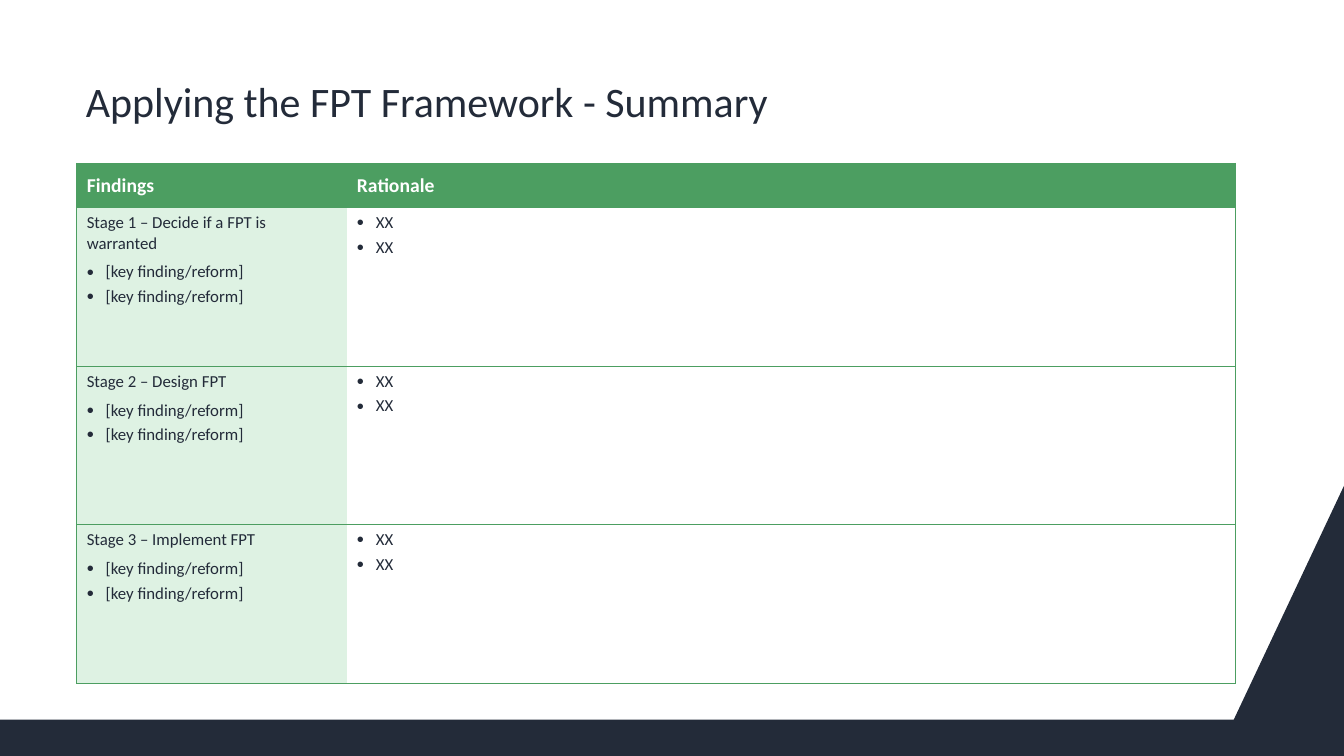
import dataclasses

import lxml.etree
import pptx
import pptx.dml.color
import pptx.enum.text
import pptx.oxml.ns
import pptx.util

Pt = pptx.util.Pt
qn = pptx.oxml.ns.qn
Anchor = pptx.enum.text.MSO_ANCHOR


@dataclasses.dataclass(frozen=True)
class Theme:
    font: str = "Calibri"
    navy: str = "232B39"
    green: str = "4C9E61"
    mint: str = "DEF2E3"
    white: str = "FFFFFF"
    title: int = 30
    head: int = 14
    body: int = 12


THEME = Theme()
BULLET = dict(bullet=True, after=3)
STAGES = (
    "Stage 1 – Decide if a FPT is warranted",
    "Stage 2 – Design FPT",
    "Stage 3 – Implement FPT",
)


def paint(fill, color):
    fill.solid()
    fill.fore_color.rgb = pptx.dml.color.RGBColor.from_string(color)


def write(frame, text, size=THEME.body, color=THEME.navy, bold=False,
          bullet=False, after=0, first=False):
    par = frame.paragraphs[0] if first else frame.add_paragraph()
    par.alignment = pptx.enum.text.PP_ALIGN.LEFT
    par.space_after = Pt(after)
    run = par.add_run()
    run.text = text
    run.font.name = THEME.font
    run.font.size = Pt(size)
    run.font.bold = bold
    paint(run.font.fill, color)
    if bullet:
        props = par._p.get_or_add_pPr()
        props.set("marL", str(Pt(13.5)))
        props.set("indent", str(-Pt(13.5)))
        lxml.etree.SubElement(props, qn("a:buSzPct"), val="120000")
        lxml.etree.SubElement(props, qn("a:buFont"), typeface="Arial")
        lxml.etree.SubElement(props, qn("a:buChar"), char="•")


def border(cell, inner):
    props = cell._tc.get_or_add_tcPr()
    for side in "LRTB":
        line = lxml.etree.SubElement(props, qn("a:ln" + side), w=str(Pt(1)))
        if side == inner:
            lxml.etree.SubElement(line, qn("a:noFill"))
        else:
            fill = lxml.etree.SubElement(line, qn("a:solidFill"))
            lxml.etree.SubElement(fill, qn("a:srgbClr"), val=THEME.green)


def add_base(slide, left, top, width, height):
    right, low = left + width, top + height
    edge = low - 26
    form = slide.shapes.build_freeform(Pt(right - 78.7), Pt(edge))
    corners = ((left, edge), (left, low), (right, low), (right, top))
    form.add_line_segments([(Pt(x), Pt(y)) for x, y in corners])
    base = form.convert_to_shape()
    base.shadow.inherit = False
    paint(base.fill, THEME.navy)
    base.line.fill.background()


def add_title(slide, left, top, width, height):
    title = slide.shapes.title
    title.left, title.top = Pt(left), Pt(top)
    title.width, title.height = Pt(width), Pt(height)
    frame = title.text_frame
    frame.margin_left = frame.margin_right = Pt(6)
    frame.margin_top = frame.margin_bottom = Pt(3.6)
    frame.auto_size = pptx.enum.text.MSO_AUTO_SIZE.NONE
    frame.vertical_anchor = Anchor.MIDDLE
    write(frame, "Applying the FPT Framework - Summary",
          size=THEME.title, first=True)


def add_grid(slide, left, top, width, height):
    rows = len(STAGES) + 1
    table = slide.shapes.add_table(
        rows, 2, Pt(left), Pt(top), Pt(width), Pt(height)).table
    side, head = 193, 31.5
    table.columns[0].width = Pt(side)
    table.columns[1].width = Pt(width - side)
    for index, row in enumerate(table.rows):
        row.height = Pt((height - head) / len(STAGES) if index else head)
        for cell, inner, tint in zip(row.cells, "RL", (THEME.mint, THEME.white)):
            border(cell, inner)
            paint(cell.fill, tint if index else THEME.green)
    for cell, label in zip(table.rows[0].cells, ("Findings", "Rationale")):
        cell.vertical_anchor = Anchor.MIDDLE
        write(cell.text_frame, label, size=THEME.head, color=THEME.white,
              bold=True, first=True)
    for index, stage in enumerate(STAGES, 1):
        finding, reason = (cell.text_frame for cell in table.rows[index].cells)
        write(finding, stage, after=6, first=True)
        for first in (True, False):
            write(finding, "[key finding/reform]", **BULLET)
            write(reason, "XX", first=first, **BULLET)


def main():
    deck = pptx.Presentation()
    deck.slide_width, deck.slide_height = Pt(960), Pt(540)
    slide = deck.slides.add_slide(deck.slide_layouts[5])
    add_base(slide, 0, 347, 960, 193)
    add_grid(slide, 54.8, 116.8, 828, 371.4)
    add_title(slide, 55.3, 35.3, 828, 73)
    deck.save("out.pptx")


if __name__ == "__main__":
    main()
